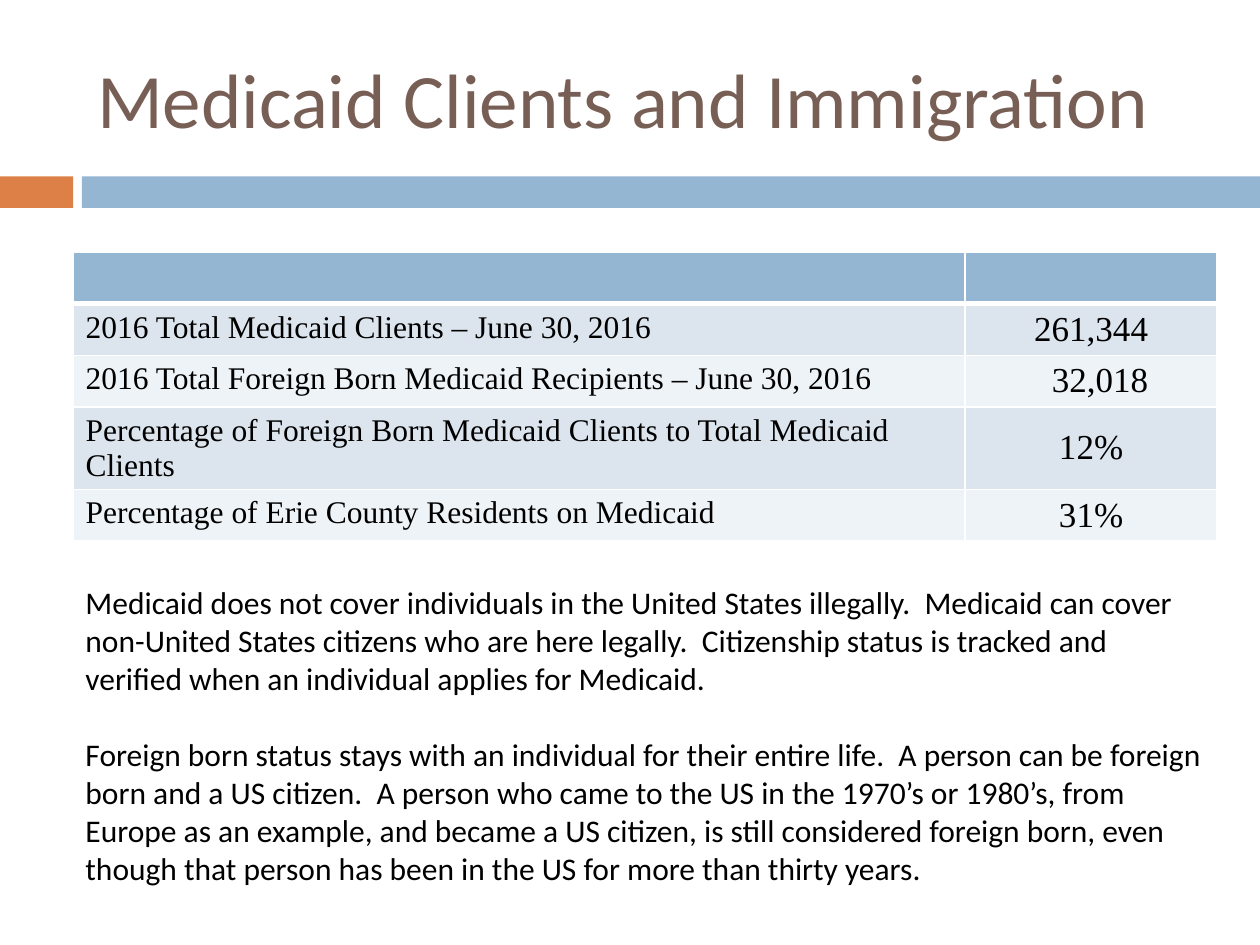
from lxml import etree
from pptx import Presentation
from pptx.dml.color import RGBColor
from pptx.enum import shapes, text
from pptx.oxml import ns
from pptx.util import Inches, Pt

WHITE = RGBColor(0xFF, 0xFF, 0xFF)
BLACK = RGBColor(0, 0, 0)
BROWN = RGBColor(0x77, 0x5F, 0x55)
ORANGE = RGBColor(0xDD, 0x80, 0x47)
BLUE = RGBColor(0x94, 0xB6, 0xD2)
BANDS = [RGBColor(0xDC, 0xE5, 0xEE), RGBColor(0xEE, 0xF3, 0xF7)]


def set_font(paragraph, name, size, color):
    paragraph.font.name = name
    paragraph.font.size = Pt(size)
    paragraph.font.color.rgb = color


def style_cell(cell, fill, bottom_width):
    properties = cell._tc.get_or_add_tcPr()
    for side, width in (("L", 1), ("R", 1), ("T", 1), ("B", bottom_width)):
        line = etree.SubElement(properties, ns.qn(f"a:ln{side}"), w=str(Pt(width)))
        solid = etree.SubElement(line, ns.qn("a:solidFill"))
        etree.SubElement(solid, ns.qn("a:srgbClr"), val=str(WHITE))
    cell.fill.solid()
    cell.fill.fore_color.rgb = fill


presentation = Presentation()
presentation.slide_width = Inches(10)
presentation.slide_height = Inches(7.5)
slide = presentation.slides.add_slide(presentation.slide_layouts[5])

# Divider bars
for left, width, color in ((0, 0.58, ORANGE), (0.65, 9.35, BLUE)):
    bar = slide.shapes.add_shape(
        shapes.MSO_SHAPE.RECTANGLE, Inches(left), Inches(1.4), Inches(width), Inches(0.25))
    bar.shadow.inherit = False
    bar.fill.solid()
    bar.fill.fore_color.rgb = color
    bar.line.fill.background()

# Title
title = slide.shapes.title
title.left, title.top = Inches(0.67), Inches(0.3)
title.width, title.height = Inches(8.83), Inches(0.95)
title.text_frame.text = "Medicaid Clients and Immigration"
title.text_frame.vertical_anchor = text.MSO_ANCHOR.MIDDLE
paragraph = title.text_frame.paragraphs[0]
paragraph.alignment = text.PP_ALIGN.LEFT
set_font(paragraph, "Calibri", 44, BROWN)

# Table of client counts, with an empty header row
rows = [
    ("", ""),
    ("2016 Total Medicaid Clients – June 30, 2016", "261,344"),
    ("2016 Total Foreign Born Medicaid Recipients – June 30, 2016", "32,018"),
    ("Percentage of Foreign Born Medicaid Clients to Total Medicaid Clients", "12%"),
    ("Percentage of Erie County Residents on Medicaid", "31%"),
]
table = slide.shapes.add_table(
    len(rows), 2, Inches(0.58), Inches(2), Inches(9.08), Inches(0.41 * len(rows))).table
table.columns[0].width = Inches(7.08)
table.columns[1].width = Inches(2)
for row, values in enumerate(rows):
    table.rows[row].height = Inches(0.41)
    for column, value in enumerate(values):
        cell = table.cell(row, column)
        style_cell(cell, BANDS[(row - 1) % 2] if row else BLUE, 1 if row else 3)
        cell.text = value
        paragraph = cell.text_frame.paragraphs[0]
        set_font(paragraph, "Times New Roman", 20 if column and row else 18, BLACK)
        if column:
            cell.vertical_anchor = text.MSO_ANCHOR.MIDDLE
            paragraph.alignment = text.PP_ALIGN.CENTER

# Line up the last digits of the two counts
table.cell(2, 1).margin_left = Inches(0.24)

# Explanatory notes
notes = [
    "Medicaid does not cover individuals in the United States illegally.  Medicaid can cover "
    "non-United States citizens who are here legally.  Citizenship status is tracked and "
    "verified when an individual applies for Medicaid.",
    "Foreign born status stays with an individual for their entire life.  A person can be "
    "foreign born and a US citizen.  A person who came to the US in the 1970’s or 1980’s, from "
    "Europe as an example, and became a US citizen, is still considered foreign born, even "
    "though that person has been in the US for more than thirty years.",
]
box = slide.shapes.add_textbox(Inches(0.58), Inches(4.58), Inches(9.08), Inches(2.52))
frame = box.text_frame
frame.word_wrap = True
frame.text = "\n".join(notes)
for paragraph in frame.paragraphs:
    set_font(paragraph, "Calibri", 18, BLACK)
frame.paragraphs[0].space_after = Pt(22)

presentation.save("out.pptx")
